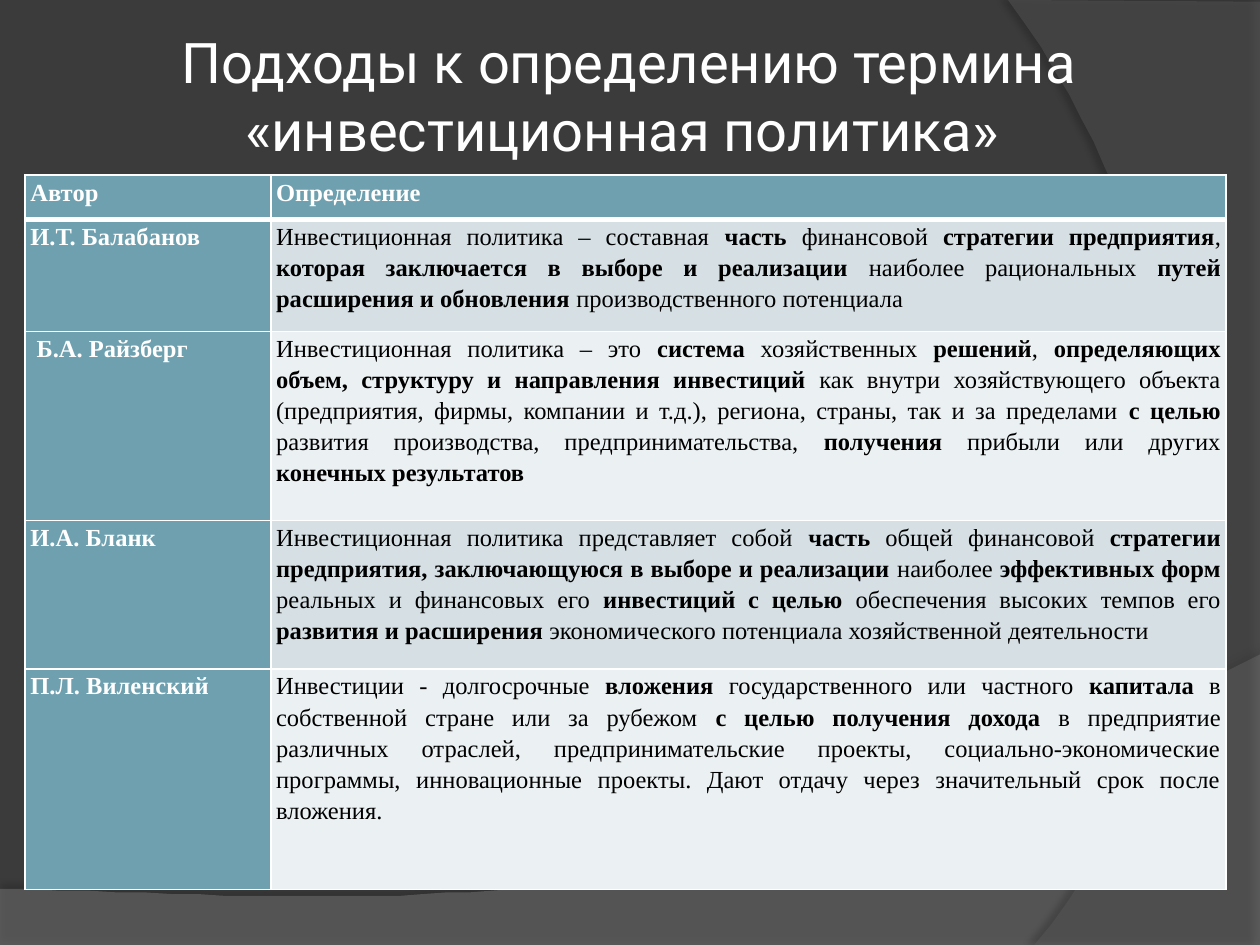
from lxml import etree
from pptx import Presentation
from pptx import util as u
from pptx.dml.color import RGBColor
from pptx.enum import text
from pptx.oxml import parse_xml
from pptx.oxml.ns import nsdecls, qn

COLORS = {
    "background": "3B3B3B", "wave": "7F7F7F", "arc": "5E5E5E", "shadow": "000000",
    "white": "FFFFFF", "black": "000000",
    "accent": "6EA0B0", "band_dark": "D5DFE4", "band_light": "EBF0F2",
}
TITLE = "Подходы к определению термина «инвестиционная политика» "
HEADER = ("Автор", "Определение")
# Double asterisks enclose bold words.
DEFINITIONS = [
    ("И.Т. Балабанов",
     "Инвестиционная политика – составная **часть** финансовой **стратегии предприятия**, "
     "**которая заключается в выборе и реализации **наиболее рациональных **путей расширения "
     "и обновления **производственного потенциала"),
    (" Б.А. Райзберг",
     "Инвестиционная политика – это **система** хозяйственных **решений**, **определяющих объем, "
     "структуру и направления инвестиций **как внутри хозяйствующего объекта (предприятия, фирмы, "
     "компании и т.д.), региона, страны, так и за пределами **с целью **развития производства, "
     "предпринимательства, **получения** прибыли или других **конечных результатов**"),
    ("И.А. Бланк",
     "Инвестиционная политика представляет собой **часть** общей финансовой **стратегии предприятия, "
     "заключающуюся в выборе и реализации **наиболее **эффективных форм **реальных и финансовых его "
     "**инвестиций с целью** обеспечения высоких темпов его **развития и расширения **экономического "
     "потенциала хозяйственной деятельности"),
    ("П.Л. Виленский",
     "Инвестиции - долгосрочные **вложения** государственного или частного **капитала** в собственной "
     "стране или за рубежом **с целью получения дохода **в предприятие различных отраслей, "
     "предпринимательские проекты, социально-экономические программы, инновационные проекты. "
     "Дают отдачу через значительный срок после вложения."),
]
SLIDE_SIZE = (720, 540)
TITLE_BOX = (65.5, 9.4, 588.2, 90)
TABLE_AT = (14.4, 100.1)
COLUMN_WIDTHS = (140.4, 545.8)
ROW_HEIGHTS = (25.2, 64.1, 108, 85, 126)


def rgb(name):
    return RGBColor.from_string(COLORS[name])


def write(frame, marked, *, size, font, color, bold=False, align, spacing=None):
    """Write one paragraph; double asterisks toggle bold."""
    paragraph = frame.paragraphs[0]
    paragraph.alignment = align
    paragraph.line_spacing = spacing
    for index, part in enumerate(marked.split("**")):
        if part:
            run = paragraph.add_run()
            run.text = part
            run.font.size = u.Pt(size)
            run.font.name = font
            run.font.bold = bold or index % 2 == 1
            run.font.color.rgb = rgb(color)


def bezier(start, control1, control2, end, steps=48):
    """Return points along a cubic curve, including both ends."""
    points = []
    for step in range(steps + 1):
        t = step / steps
        weights = ((1 - t) ** 3, 3 * t * (1 - t) ** 2, 3 * t * t * (1 - t), t ** 3)
        points.append(tuple(sum(w * p[axis] for w, p in zip(weights, (start, control1, control2, end)))
                            for axis in (0, 1)))
    return points


def add_backdrop(slide, points, color, opacity, shadow_opacity, distance, direction):
    builder = slide.shapes.build_freeform(*points[0], scale=u.Pt(1))
    builder.add_line_segments(points[1:], close=True)
    shape = builder.convert_to_shape()
    shape.fill.solid()
    shape.fill.fore_color.rgb = rgb(color)
    shape.line.fill.background()
    fill_color = shape.element.spPr.find(qn("a:solidFill"))[0]
    etree.SubElement(fill_color, qn("a:alpha"), val=str(opacity * 1000))
    shape.element.spPr.append(parse_xml(
        f'<a:effectLst {nsdecls("a")}><a:outerShdw blurRad="{u.Pt(4)}" dist="{u.Pt(distance)}" '
        f'dir="{direction * 60000}" algn="ctr" rotWithShape="0"><a:srgbClr val="{COLORS["shadow"]}">'
        f'<a:alpha val="{shadow_opacity * 1000}"/></a:srgbClr></a:outerShdw></a:effectLst>'))


def set_borders(cell, **widths):
    properties = cell._tc.get_or_add_tcPr()
    for side in "LRTB":
        properties.append(parse_xml(
            f'<a:ln{side} {nsdecls("a")} w="{u.Pt(widths.get(side, 1))}"><a:solidFill>'
            f'<a:srgbClr val="{COLORS["white"]}"/></a:solidFill></a:ln{side}>'))


def add_definitions(slide):
    rows = [HEADER, *DEFINITIONS]
    frame = slide.shapes.add_table(len(rows), len(HEADER), *map(u.Pt, TABLE_AT),
                                   u.Pt(sum(COLUMN_WIDTHS)), u.Pt(sum(ROW_HEIGHTS)))
    table = frame.table
    table.horz_banding = False
    for column, width in zip(table.columns, COLUMN_WIDTHS):
        column.width = u.Pt(width)
    for r, (row, height) in enumerate(zip(rows, ROW_HEIGHTS)):
        table.rows[r].height = u.Pt(height)
        for c, content in enumerate(row):
            cell = table.cell(r, c)
            heading = r == 0 or c == 0
            cell.margin_left = cell.margin_right = u.Pt(3)
            cell.margin_top = cell.margin_bottom = 0
            set_borders(cell, T=3 if r == 1 else 1, B=3 if r == 0 else 1)
            cell.fill.solid()
            cell.fill.fore_color.rgb = rgb("accent" if heading else
                                           "band_dark" if r % 2 else "band_light")
            write(cell.text_frame, content, size=14, font="Times New Roman",
                  color="white" if heading else "black", bold=heading,
                  align=text.PP_ALIGN.JUSTIFY, spacing=1.15)


def add_title(slide):
    title = slide.shapes.title
    title.left, title.top, title.width, title.height = map(u.Pt, TITLE_BOX)
    frame = title.text_frame
    frame.word_wrap = True
    frame.auto_size = text.MSO_AUTO_SIZE.NONE
    frame.vertical_anchor = text.MSO_ANCHOR.MIDDLE
    frame.margin_left = frame.margin_right = frame.margin_top = frame.margin_bottom = u.Pt(3.6)
    write(frame, TITLE, size=32, font="Roboto", color="white", align=text.PP_ALIGN.CENTER)
    # Bring the title in front of the backdrop.
    title.element.getparent().append(title.element)


def main():
    presentation = Presentation()
    presentation.slide_width, presentation.slide_height = map(u.Pt, SLIDE_SIZE)
    slide = presentation.slides.add_slide(presentation.slide_layouts[5])
    slide.background.fill.solid()
    slide.background.fill.fore_color.rgb = rgb("background")

    wave = [(0, 540), (720, 540), *bezier((720, 374.4), (402.5, 525), (281.5, 517.7), (0, 507.6))]
    arc = [(720, 1.4), (720, 540), *bezier((591, 540), (673, 445.7), (733, 216), (576, 0))]
    add_backdrop(slide, wave, "wave", 45, shadow_opacity=35, distance=3.5, direction=270)
    add_backdrop(slide, arc, "arc", 40, shadow_opacity=45, distance=4, direction=180)
    add_title(slide)
    add_definitions(slide)
    presentation.save("out.pptx")


if __name__ == "__main__":
    main()
